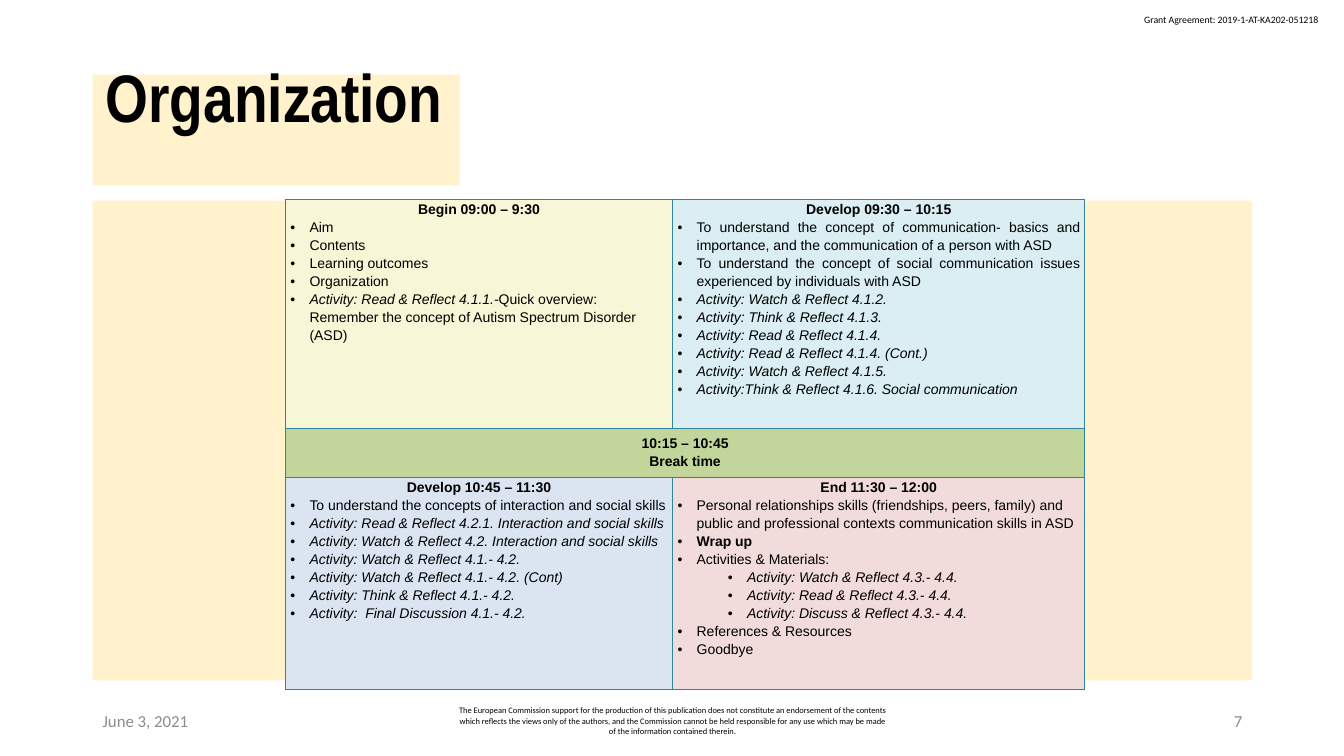
"""Build the Organization slide: a four-part session timetable around a break."""
from lxml.etree import SubElement
from pptx import Presentation
from pptx.dml.color import RGBColor
from pptx.enum.shapes import MSO_SHAPE
from pptx.enum.text import MSO_ANCHOR, PP_ALIGN
from pptx.oxml.ns import qn
from pptx.util import Inches, Pt

COLORS = {
    "text": "000000", "footer": "8C8C8C", "panel": "FFF2CC", "border": "31849B",
    "begin": "F7F7D7", "develop": "DAEEF3", "break": "C2D69B",
    "interact": "DBE5F1", "end": "F2DBDB",
}
LEFT, CENTER, RIGHT, JUSTIFY = PP_ALIGN.LEFT, PP_ALIGN.CENTER, PP_ALIGN.RIGHT, PP_ALIGN.JUSTIFY


def style(span, size, font, color="text", bold=False, italic=False):
    span.font.size = Pt(size)
    span.font.name = font
    span.font.bold = bold
    span.font.italic = italic
    span.font.color.rgb = RGBColor.from_string(COLORS[color])


def add_bullet(para, level):
    properties = para._p.get_or_add_pPr()
    properties.set("marL", str(Inches(0.19 + 0.5 * level)))
    properties.set("indent", str(Inches(-0.19)))
    SubElement(properties, qn("a:buFont")).set("typeface", "Arial")
    SubElement(properties, qn("a:buChar")).set("char", "•")


deck = Presentation()
deck.slide_width, deck.slide_height = Inches(13.33), Inches(7.5)
page = deck.slides.add_slide(deck.slide_layouts[6])

for left, top, width, height in [(0.92, 0.74, 3.64, 1.1), (0.92, 1.99, 11.5, 4.76)]:
    panel = page.shapes.add_shape(
        MSO_SHAPE.RECTANGLE, Inches(left), Inches(top), Inches(width), Inches(height))
    panel.shadow.inherit = False
    panel.fill.solid()
    panel.fill.fore_color.rgb = RGBColor.from_string(COLORS["panel"])
    panel.line.fill.background()

disclaimer = (
    "The European Commission support for the production of this publication does not "
    "constitute an endorsement of the contents which reflects the views only of the authors, "
    "and the Commission cannot be held responsible for any use which may be made of the "
    "information contained therein.")
labels = [
    ("Grant Agreement: 2019-1-AT-KA202-051218", 11.25, 0.08, 1.97, 0.22, LEFT, 7, "Calibri", "text"),
    ("Organization", 0.95, 0.5, 3.64, 0.9, LEFT, 48, "Arial Narrow", "text"),
    ("June 3, 2021", 0.92, 6.95, 3, 0.4, LEFT, 12, "Calibri", "footer"),
    (disclaimer, 4.42, 6.95, 4.5, 0.4, CENTER, 6, "Calibri", "text"),
    ("7", 9.42, 6.95, 3, 0.4, RIGHT, 12, "Calibri", "footer"),
]
for text, left, top, width, height, align, size, font, color in labels:
    box = page.shapes.add_textbox(Inches(left), Inches(top), Inches(width), Inches(height))
    frame = box.text_frame
    frame.text = text
    frame.word_wrap = size != 7
    frame.vertical_anchor = MSO_ANCHOR.MIDDLE
    para = frame.paragraphs[0]
    para.alignment = align
    style(para.runs[0], size, font, color, bold=text == "Organization")

sessions = [
    (0, 0, "begin", LEFT, ["Begin 09:00 – 9:30"], [
        (0, "Aim"), (0, "Contents"), (0, "Learning outcomes"), (0, "Organization"),
        (0, "Activity: Read & Reflect 4.1.1.-|Quick overview: "
            "Remember the concept of Autism Spectrum Disorder (ASD)")]),
    (0, 1, "develop", JUSTIFY, ["Develop 09:30 – 10:15"], [
        (0, "To understand the concept of communication- basics and importance, "
            "and the communication of a person with ASD"),
        (0, "To understand the concept of social communication issues "
            "experienced by individuals with ASD"),
        (0, "Activity: Watch & Reflect 4.1.2."),
        (0, "Activity: Think & Reflect 4.1.3."),
        (0, "Activity: Read & Reflect 4.1.4."),
        (0, "Activity: Read & Reflect 4.1.4. (Cont.)"),
        (0, "Activity: Watch & Reflect 4.1.5."),
        (0, "Activity:Think & Reflect 4.1.6. Social communication")]),
    (1, 0, "break", CENTER, ["10:15 – 10:45", "Break time"], []),
    (2, 0, "interact", JUSTIFY, ["Develop 10:45 – 11:30"], [
        (0, "To understand the concepts of interaction and social skills"),
        (0, "Activity: Read & Reflect 4.2.1. Interaction and social skills"),
        (0, "Activity: Watch & Reflect 4.2. Interaction and social skills"),
        (0, "Activity: Watch & Reflect 4.1.- 4.2."),
        (0, "Activity: Watch & Reflect 4.1.- 4.2. (Cont)"),
        (0, "Activity: Think & Reflect 4.1.- 4.2."),
        (0, "Activity:  Final Discussion 4.1.- 4.2.")]),
    (2, 1, "end", LEFT, ["End 11:30 – 12:00"], [
        (0, "Personal relationships skills (friendships, peers, family) and "
            "public and professional contexts communication skills in ASD"),
        (0, "Wrap up"),
        (0, "Activities & Materials:"),
        (1, "Activity: Watch & Reflect 4.3.- 4.4."),
        (1, "Activity: Read & Reflect 4.3.- 4.4."),
        (1, "Activity: Discuss & Reflect 4.3.- 4.4."),
        (0, "References & Resources"),
        (0, "Goodbye")]),
]
timetable = page.shapes.add_table(
    3, 2, Inches(2.83), Inches(1.98), Inches(7.93), Inches(4.86)).table
timetable.first_row = timetable.horz_banding = False
for column, width in zip(timetable.columns, [3.84, 4.09]):
    column.width = Inches(width)
for row, height in zip(timetable.rows, [2.27, 0.49, 2.1]):
    row.height = Inches(height)
timetable.cell(1, 0).merge(timetable.cell(1, 1))

for cell in timetable.iter_cells():
    properties = cell._tc.get_or_add_tcPr()
    for side in ("lnL", "lnR", "lnT", "lnB"):
        border = SubElement(properties, qn(f"a:{side}"), w=str(Pt(1)))
        solid = SubElement(border, qn("a:solidFill"))
        SubElement(solid, qn("a:srgbClr"), val=COLORS["border"])

for row, column, color, align, headings, items in sessions:
    cell = timetable.cell(row, column)
    cell.fill.solid()
    cell.fill.fore_color.rgb = RGBColor.from_string(COLORS[color])
    cell.margin_left = cell.margin_right = Inches(0.05)
    cell.margin_top = cell.margin_bottom = Inches(0 if items else 0.05)
    frame = cell.text_frame
    frame.text = "\n".join(headings + [text for level, text in items])
    for para in frame.paragraphs[:len(headings)]:
        para.alignment = CENTER
        para.line_spacing = 1.15
        style(para.runs[0], 10, "Arial", bold=True)
    for para, (level, text) in zip(frame.paragraphs[len(headings):], items):
        parts = text.split("|")
        para.text = parts[0]
        for part in parts[1:]:
            para.add_run().text = part
        para.level = level
        para.alignment = align
        para.line_spacing = 1.15
        add_bullet(para, level)
        for span in para.runs:
            style(span, 10, "Arial", bold=span.text == "Wrap up",
                  italic=span.text.startswith("Activity:"))

deck.save("out.pptx")
